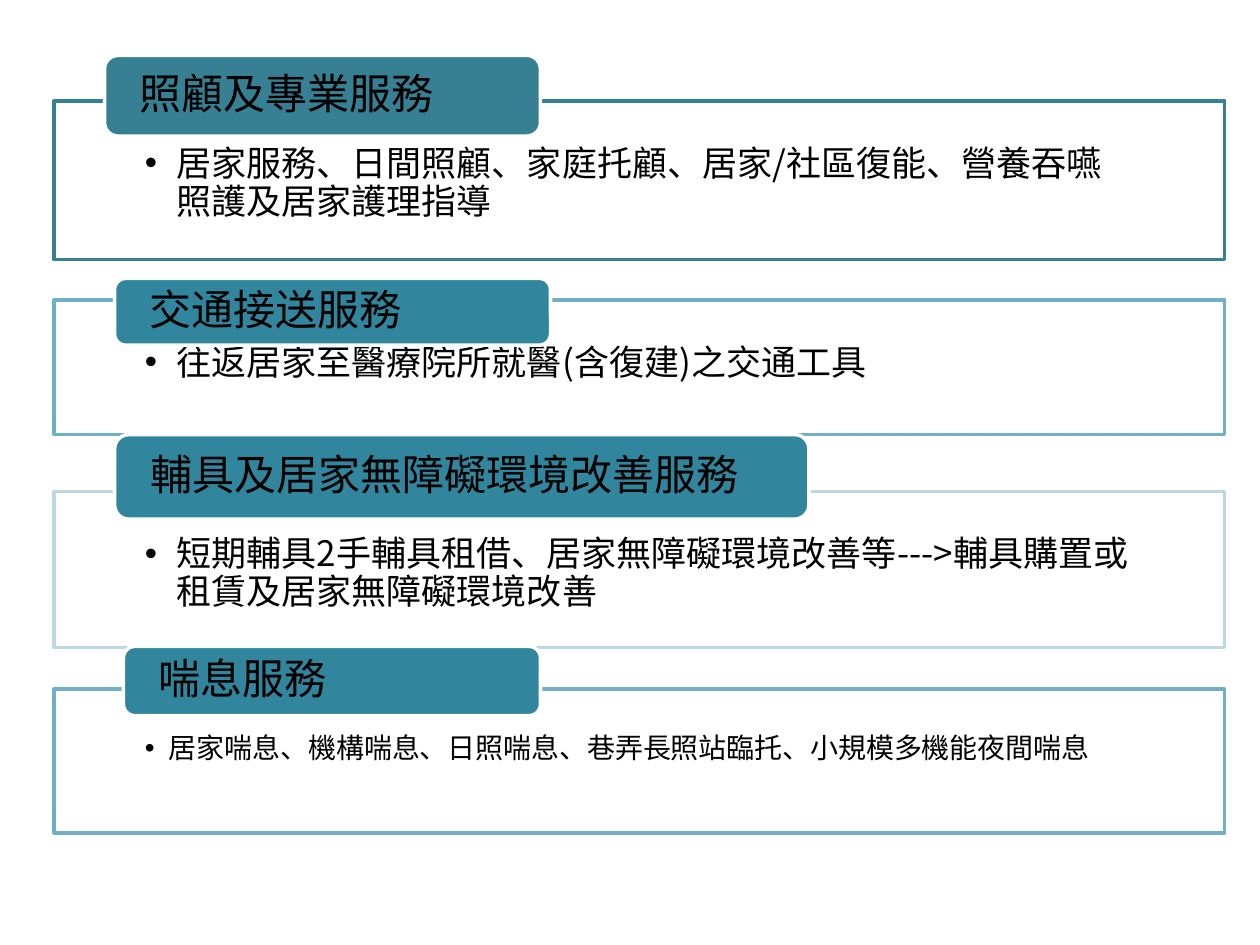
from lxml.etree import SubElement
from pptx import Presentation
from pptx.dml.color import RGBColor
from pptx.enum.shapes import MSO_SHAPE
from pptx.enum.text import MSO_ANCHOR, PP_ALIGN
from pptx.oxml.ns import qn
from pptx.util import Inches, Pt

FONT = "Noto Sans CJK SC"
COLORS = {
    "white": "FFFFFF",
    "black": "000000",
    "deep_teal": "377F92",
    "teal": "31859C",
    "light_teal": "70B0C5",
    "pale_teal": "BED8E3",
}


def add_box(kind, left, top, width, height, fill, line):
    shape = slide.shapes.add_shape(
        kind, Inches(left), Inches(top), Inches(width), Inches(height))
    shape.shadow.inherit = False
    shape.fill.solid()
    shape.fill.fore_color.rgb = RGBColor.from_string(COLORS[fill])
    shape.line.color.rgb = RGBColor.from_string(COLORS[line])
    shape.line.width = Pt(2)
    return shape


def write_text(shape, text, size, insets, anchor=MSO_ANCHOR.TOP, indent=0):
    frame = shape.text_frame
    frame.word_wrap = True
    frame.vertical_anchor = anchor
    (frame.margin_left, frame.margin_top,
     frame.margin_right, frame.margin_bottom) = map(Inches, insets)
    paragraph = frame.paragraphs[0]
    paragraph.alignment = PP_ALIGN.LEFT
    paragraph.line_spacing = 0.9
    if indent:
        paragraph.level = 1
        properties = paragraph._p.get_or_add_pPr()
        properties.set("marL", str(Inches(indent)))
        properties.set("indent", str(-Inches(indent)))
        SubElement(properties, qn("a:buFont")).set("typeface", "Arial")
        SubElement(properties, qn("a:buChar")).set("char", "•")
    run = paragraph.add_run()
    run.text = text
    run.font.size = Pt(size)
    run.font.color.rgb = RGBColor.from_string(COLORS["black"])
    run.font.name = FONT
    SubElement(run._r.get_or_add_rPr(), qn("a:ea")).set("typeface", FONT)


presentation = Presentation()
presentation.slide_width = Inches(10)
presentation.slide_height = Inches(7.5)
slide = presentation.slides.add_slide(presentation.slide_layouts[6])

services = [
    {"heading": "照顧及專業服務", "tab": (0.83, 0.44, 3.46, 0.64), "fill": "deep_teal",
     "detail": "居家服務、日間照顧、家庭托顧、居家/社區復能、營養吞嚥照護及居家護理指導",
     "top": 0.8, "height": 1.26, "line": "deep_teal", "size": 20},
    {"heading": "交通接送服務", "tab": (0.91, 2.21, 3.46, 0.53), "fill": "teal",
     "detail": "往返居家至醫療院所就醫(含復建)之交通工具",
     "top": 2.38, "height": 1.07, "line": "light_teal", "size": 20},
    {"heading": "輔具及居家無障礙環境改善服務", "tab": (0.91, 3.45, 5.51, 0.67), "fill": "teal",
     "detail": "短期輔具2手輔具租借、居家無障礙環境改善等--->輔具購置或租賃及居家無障礙環境改善",
     "top": 3.9, "height": 1.24, "line": "pale_teal", "size": 20},
    {"heading": "喘息服務", "tab": (0.98, 5.13, 3.31, 0.55), "fill": "teal",
     "detail": "居家喘息、機構喘息、日照喘息、巷弄長照站臨托、小規模多機能夜間喘息",
     "top": 5.47, "height": 1.14, "line": "light_teal", "size": 16},
]

for service in services:
    size = service["size"]
    panel = add_box(MSO_SHAPE.RECTANGLE, 0.43, service["top"], 9.29,
                    service["height"], "white", service["line"])
    panel_color = panel._element.spPr.find(qn("a:solidFill"))[0]
    SubElement(panel_color, qn("a:alpha")).set("val", "90000")
    write_text(panel, service["detail"], size, (0.72, 0.36, 0.72, size * 0.008),
               indent=0.25 if size == 20 else 0.19)
    tab = add_box(MSO_SHAPE.ROUNDED_RECTANGLE, *service["tab"],
                  service["fill"], "white")
    write_text(tab, service["heading"], 24, (0.25, 0, 0.25, 0),
               anchor=MSO_ANCHOR.MIDDLE)

presentation.save("out.pptx")
